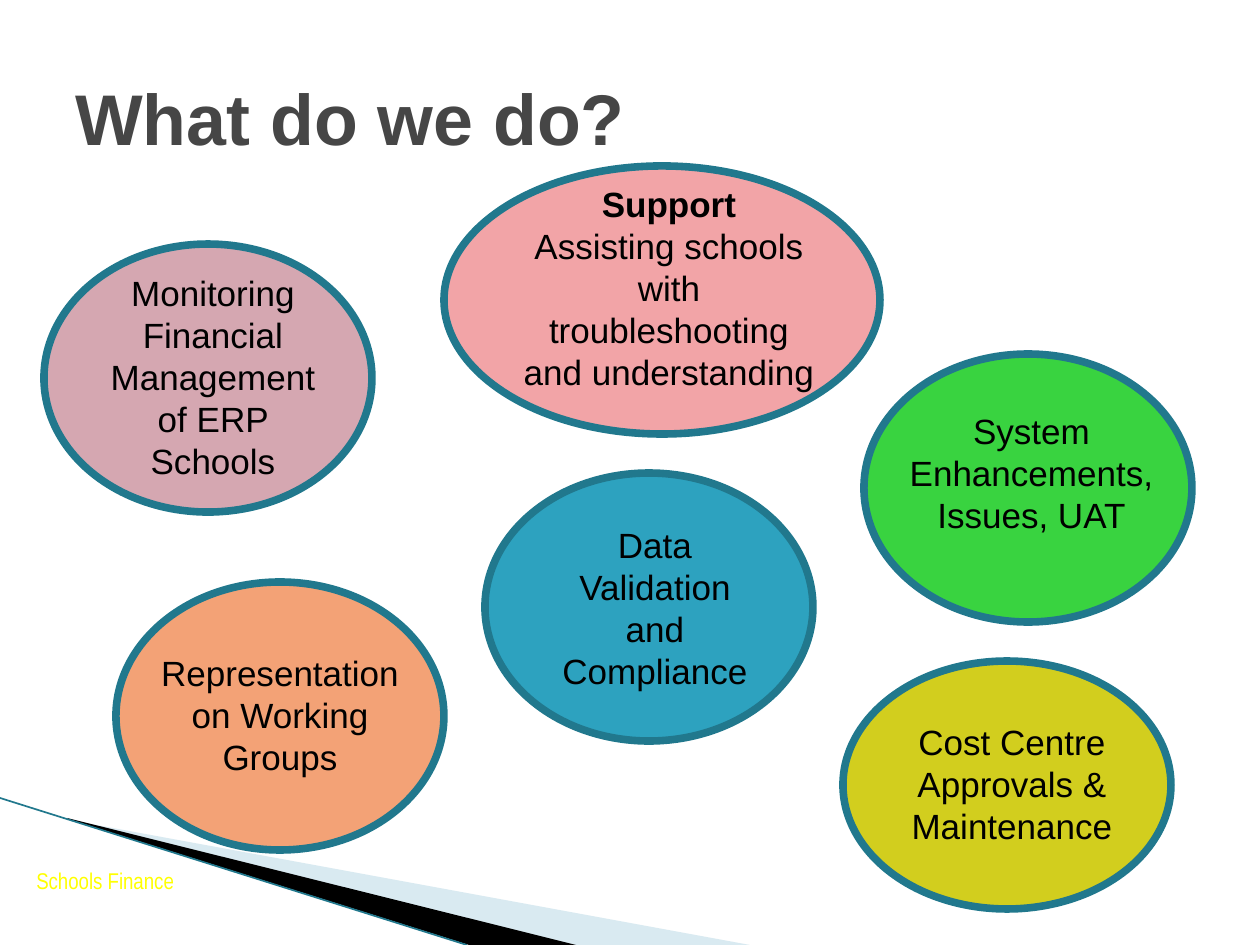
from lxml.etree import SubElement
from pptx import Presentation
from pptx.dml.color import RGBColor
from pptx.enum.shapes import MSO_CONNECTOR, MSO_SHAPE
from pptx.enum.text import MSO_ANCHOR, PP_ALIGN
from pptx.oxml.ns import qn
from pptx.util import Emu, Pt

SCALE = 914400 / 126  # EMU in one px
WIDTH, HEIGHT = 1260, 945

COLORS = {
    "title": "464646", "text": "000000", "footer": "FFFF00",
    "outline": "21788D", "wedge": "A0CBDC", "blade": "000000",
    "mauve": "D5A7B1", "pink": "F2A4A7", "green": "39D340",
    "mustard": "D2CE1E", "orange": "F3A276", "blue": "2DA2BF",
}

# Each bubble: ellipse box, text box relative to it, fill, paragraphs as (text, bold)
BUBBLES = [
    ((44, 244, 328, 268), (50, 21, 238, 224), "mauve",
     [("Monitoring Financial Management of ERP Schools", False)]),
    ((444, 166, 436, 268), (66, 10, 318, 224), "pink",
     [("Support", True),
      ("Assisting schools with troubleshooting and understanding", False)]),
    ((864, 354, 328, 268), (8, 49, 319, 140), "green",
     [("System Enhancements, Issues, UAT", False)]),
    ((843, 661, 328, 248), (50, 53, 238, 140), "mustard",
     [("Cost Centre", False), ("Approvals & Maintenance", False)]),
    ((116, 582, 328, 268), (30, 63, 268, 140), "orange",
     [("Representation on Working Groups", False)]),
    ((485, 473, 328, 268), (51, 44, 238, 183), "blue",
     [("Data Validation and Compliance", False)]),
]


def px(value):
    return Emu(round(value * SCALE))


def color(name):
    return RGBColor.from_string(COLORS[name])


def add_text(shapes, box, paragraphs, size, color_name, font="Arial",
             align=PP_ALIGN.CENTER, anchor=MSO_ANCHOR.TOP):
    frame = shapes.add_textbox(*map(px, box)).text_frame
    frame.word_wrap = True
    frame.vertical_anchor = anchor
    for index, (text, bold) in enumerate(paragraphs):
        para = frame.add_paragraph() if index else frame.paragraphs[0]
        para.alignment = align
        span = para.add_run()
        span.text = text
        span.font.name = font
        span.font.size = Pt(size)
        span.font.bold = bold
        span.font.color.rgb = color(color_name)


def add_outline(shapes, origin, points, color_name, opacity=100):
    left, top = origin
    corners = [(left + x, top + y) for x, y in points]
    builder = shapes.build_freeform(*corners[0], scale=SCALE)
    builder.add_line_segments(corners[1:], close=True)
    shape = builder.convert_to_shape()
    shape.shadow.inherit = False
    shape.fill.solid()
    shape.fill.fore_color.rgb = color(color_name)
    shape.line.fill.background()
    if opacity < 100:
        fill = shape.fill._xPr.find(qn("a:solidFill"))
        SubElement(fill[0], qn("a:alpha")).set("val", str(opacity * 1000))


def add_corner(shapes, box):
    """Swoosh and footer in the lower left corner."""
    left, top, width, height = box
    add_outline(shapes, (left, top),
                [(69, 22), (750, height), (575, height), (69, 21)], "wedge", 40)
    add_outline(shapes, (left, top),
                [(67, 20), (576, height), (469, height), (68, 21)], "blade")
    edge = shapes.add_connector(MSO_CONNECTOR.STRAIGHT, px(left), px(top),
                                px(left + 467), px(top + height))
    edge.line.color.rgb = color("outline")
    edge.line.width = Pt(0.95)
    SubElement(edge._element.spPr, qn("a:effectLst"))
    add_text(shapes, (left, top + 63, 210, 40), [("Schools Finance", False)],
             13, "footer", "Arial Narrow")


def add_title(shapes, box):
    add_text(shapes, box, [("What do we do?", True)], 41, "title",
             align=PP_ALIGN.LEFT, anchor=MSO_ANCHOR.MIDDLE)


def add_bubble(shapes, box, text_box, fill, paragraphs):
    """Ellipse grouped with its caption."""
    left, top, width, height = box
    group = shapes.add_group_shape()
    ellipse = group.shapes.add_shape(MSO_SHAPE.OVAL, *map(px, box))
    ellipse.shadow.inherit = False
    ellipse.fill.solid()
    ellipse.fill.fore_color.rgb = color(fill)
    ellipse.line.color.rgb = color("outline")
    ellipse.line.width = Pt(4.33)
    x, y, text_width, text_height = text_box
    add_text(group.shapes, (left + x, top + y, text_width, text_height),
             paragraphs, 20, "text")


def main():
    deck = Presentation()
    deck.slide_width, deck.slide_height = px(WIDTH), px(HEIGHT)
    page = deck.slides.add_slide(deck.slide_layouts[6])
    add_corner(page.shapes, (0, 798, 750, HEIGHT - 798))
    add_title(page.shapes, (63, 38, 1134, 158))
    for bubble in BUBBLES:
        add_bubble(page.shapes, *bubble)
    deck.save("out.pptx")


if __name__ == "__main__":
    main()
